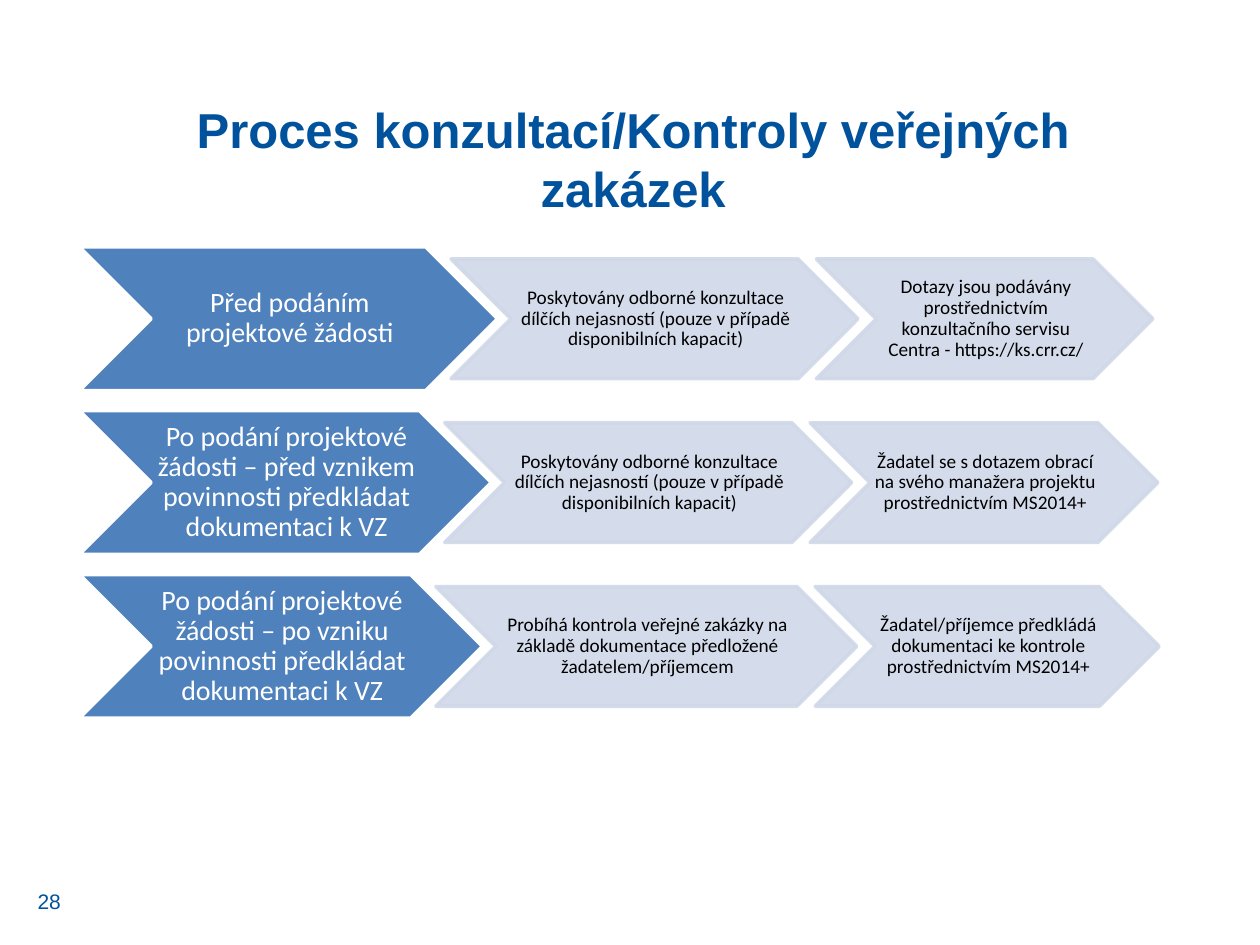
from lxml import etree
from pptx import Presentation
from pptx.dml.color import RGBColor
from pptx.enum.shapes import MSO_SHAPE
from pptx.enum.text import MSO_ANCHOR, PP_ALIGN
from pptx.oxml.ns import qn
from pptx.util import Inches, Pt

CHEVRON = MSO_SHAPE.CHEVRON
CENTER, LEFT = PP_ALIGN.CENTER, PP_ALIGN.LEFT
TOP, MIDDLE = MSO_ANCHOR.TOP, MSO_ANCHOR.MIDDLE

COLORS = {"navy": "00529C", "blue": "4F81BD", "pale": "D0D8E8",
          "white": "FFFFFF", "black": "000000"}
FORMATS = {
    "title": {"size": Pt(28), "name": "Arial", "bold": True},
    "number": {"size": Pt(12), "name": "Arial"},
    "stage": {"size": Pt(16), "name": "Calibri"},
    "step": {"size": Pt(11), "name": "Calibri"},
}
CHEVRONS = {
    "stage": {"fill": "blue", "line": "white", "text": "white", "alpha": None},
    "step": {"fill": "pale", "line": "pale", "text": "black", "alpha": 90},
}
TIGHT = {"margin_left": Inches(0.02), "margin_right": 0,
         "margin_top": Inches(0.01), "margin_bottom": Inches(0.01)}

CONSULTATION = ("Poskytovány odborné konzultace dílčích nejasností "
                "(pouze v případě disponibilních kapacit)")
PROCESS = [
    [("Před podáním projektové žádosti", 33.2),
     (CONSULTATION, 32.3),
     ("Dotazy jsou podávány prostřednictvím konzultačního servisu "
      "Centra - https://ks.crr.cz/", 26.7)],
    [("Po podání projektové žádosti – před vznikem povinnosti předkládat "
      "dokumentaci k VZ", 32.7),
     (CONSULTATION, 32.3),
     ("Žadatel se s dotazem obrací na svého manažera projektu "
      "prostřednictvím MS2014+", 27.6)],
    [("Po podání projektové žádosti – po vzniku povinnosti předkládat "
      "dokumentaci k VZ", 32),
     ("Probíhá kontrola veřejné zakázky na základě dokumentace předložené "
      "žadatelem/příjemcem", 33.4),
     ("Žadatel/příjemce předkládá dokumentaci ke kontrole "
      "prostřednictvím MS2014+", 27.3)],
]


class Deck:
    COLUMNS, ROWS = 100, 75

    def __init__(self):
        self.prs = Presentation()
        self.prs.slide_width, self.prs.slide_height = Inches(10), Inches(7.5)
        self.slide = self.prs.slides.add_slide(self.prs.slide_layouts[6])

    def box(self, x, y, w, h):
        col = self.prs.slide_width / self.COLUMNS
        row = self.prs.slide_height / self.ROWS
        return round(x * col), round(y * row), round(w * col), round(h * row)

    def color(self, name):
        return RGBColor.from_string(COLORS[name])

    def text(self, text, cell, style, color, align=CENTER, anchor=MIDDLE,
             margins=None, spacing=None, shapes=None):
        shapes = shapes or self.slide.shapes
        tf = shapes.add_textbox(*self.box(*cell)).text_frame
        tf.word_wrap, tf.vertical_anchor = True, anchor
        for key, value in (margins or {}).items():
            setattr(tf, key, value)
        p = tf.paragraphs[0]
        p.alignment, p.line_spacing = align, spacing
        r = p.add_run()
        r.text = text
        for key, value in FORMATS[style].items():
            setattr(r.font, key, value)
        r.font.color.rgb = self.color(color)

    def chevron(self, shapes, text, cell, style):
        look = CHEVRONS[style]
        sp = shapes.add_shape(CHEVRON, *self.box(*cell))
        sp.shadow.inherit = False
        sp.fill.solid()
        sp.fill.fore_color.rgb = self.color(look["fill"])
        sp.line.color.rgb = self.color(look["line"])
        sp.line.width = Pt(2)
        if look["alpha"]:
            for clr in sp.element.spPr.iter(qn("a:srgbClr")):
                alpha = etree.SubElement(clr, qn("a:alpha"))
                alpha.set("val", str(look["alpha"] * 1000))
        x, y, w, h = cell
        self.text(text, (x + h / 2, y, w - h, h), style, look["text"],
                  margins=TIGHT, spacing=0.9, shapes=shapes)

    def process(self, stages, left, top, pitch):
        shapes = self.slide.shapes.add_group_shape().shapes
        stage_h, step_h = 11.4, 9.5
        overlaps = (3.7, 3.3, 0)
        for i, stage in enumerate(stages):
            x, y = left, top + i * pitch
            for j, (text, width) in enumerate(stage):
                style, h = ("step", step_h) if j else ("stage", stage_h)
                self.chevron(shapes, text,
                             (x, y + (stage_h - h) / 2, width, h), style)
                x += width - overlaps[j]


def main():
    s = Deck()
    s.text("Proces konzultací/Kontroly veřejných zakázek",
           (11.7, 7.4, 77.1, 8.3), "title", "navy", anchor=TOP)
    s.text("28", (2, 69.5, 5.5, 4), "number", "navy", align=LEFT)
    s.process(PROCESS, left=6.3, top=19.6, pitch=13)
    s.prs.save("out.pptx")


if __name__ == "__main__":
    main()
